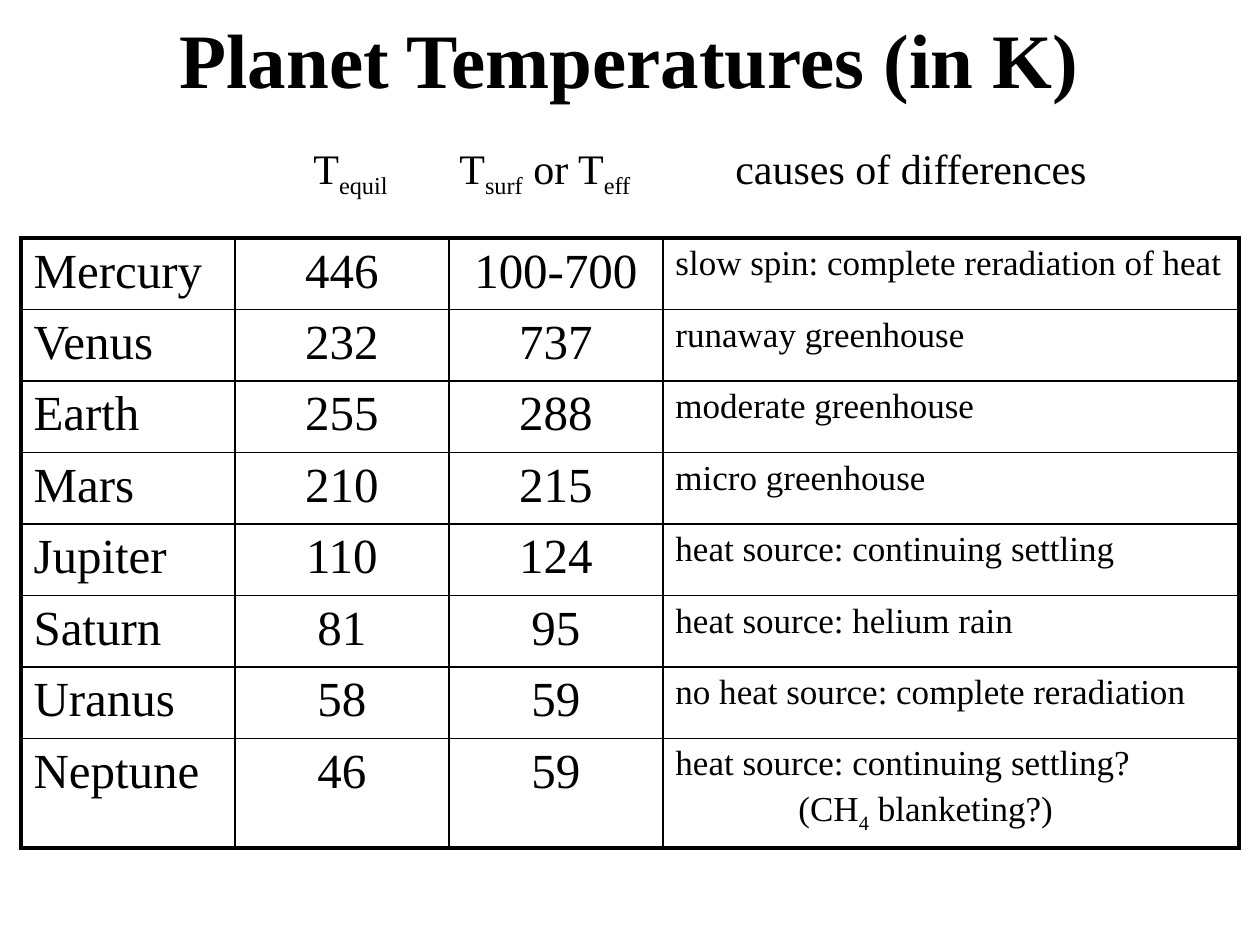
from lxml import etree
from pptx import Presentation
from pptx.dml.color import RGBColor
from pptx.enum.text import MSO_ANCHOR, PP_ALIGN
from pptx.oxml.ns import qn
from pptx.util import Emu, Pt

LEFT, CENTER = PP_ALIGN.LEFT, PP_ALIGN.CENTER
MIDDLE = MSO_ANCHOR.MIDDLE
COLORS = {"ink": "000000"}
FONT = "Times New Roman"
EMU_PER_PX = 914400 / 126

COLUMN_WIDTHS = [214, 214, 214, 576]
LAST_ROW_HEIGHT = 105
THIN, THICK = 1, 2.25
SUBSCRIPT = -25000

# Planet, equilibrium temperature, surface temperature, cause lines
PLANETS = [
    ("Mercury", "446", "100-700", ["slow spin: complete reradiation of heat"]),
    ("Venus", "232", "737", ["runaway greenhouse"]),
    ("Earth", "255", "288", ["moderate greenhouse"]),
    ("Mars", "210", "215", ["micro greenhouse"]),
    ("Jupiter", "110", "124", ["heat source: continuing settling"]),
    ("Saturn", "81", "95", ["heat source: helium rain"]),
    ("Uranus", "58", "59", ["no heat source: complete reradiation"]),
    ("Neptune", "46", "59",
     ["heat source: continuing settling?", "(CH_4_ blanketing?)"]),
]


def px(length):
    return Emu(round(length * EMU_PER_PX))


def write_runs(paragraph, text, size, bold=False):
    """Write text in which every part between underscores is a subscript."""
    for index, part in enumerate(text.split("_")):
        run = paragraph.add_run()
        run.text = part
        for name, value in {"name": FONT, "size": Pt(size), "bold": bold}.items():
            setattr(run.font, name, value)
        run.font.color.rgb = RGBColor.from_string(COLORS["ink"])
        if index % 2:
            run.font._element.set("baseline", str(SUBSCRIPT))


def add_text_box(slide, box):
    frame = slide.shapes.add_textbox(*map(px, box)).text_frame
    frame.word_wrap = True
    return frame


def add_title(slide, box):
    frame = add_text_box(slide, box)
    frame.vertical_anchor = MIDDLE
    paragraph = frame.paragraphs[0]
    paragraph.alignment = CENTER
    write_runs(paragraph, "Planet Temperatures (in K)", 44, bold=True)


def add_column_headings(slide, box):
    paragraph = add_text_box(slide, box).paragraphs[0]
    write_runs(paragraph, "\tT_equil_\tT_surf_ or T_eff_\tcauses of differences", 24)
    # Tab stops place the headings over their columns
    tabs = etree.SubElement(paragraph._p.get_or_add_pPr(), qn("a:tabLst"))
    for position in (62, 208, 484):
        etree.SubElement(tabs, qn("a:tab"), pos=str(px(position)), algn="l")


def set_borders(cell, widths):
    properties = cell._tc.get_or_add_tcPr()
    for index, (side, width) in enumerate(widths.items()):
        line = etree.Element(qn(f"a:ln{side}"), w=str(Pt(width)))
        fill = etree.SubElement(line, qn("a:solidFill"))
        etree.SubElement(fill, qn("a:srgbClr"), val=COLORS["ink"])
        properties.insert(index, line)


def write_cell(cell, lines, size, alignment):
    frame = cell.text_frame
    for index, text in enumerate(lines):
        paragraph = frame.add_paragraph() if index else frame.paragraphs[0]
        paragraph.alignment = alignment
        properties = paragraph._p.get_or_add_pPr()
        if index:
            properties.set("marL", str(px(123)))
            properties.set("indent", "0")
        # Space before is a fifth of a line
        spacing = etree.SubElement(properties, qn("a:spcBef"))
        etree.SubElement(spacing, qn("a:spcPct"), val="20000")
        write_runs(paragraph, text, size)


def add_planet_table(slide, box):
    last_row, last_column = len(PLANETS) - 1, len(COLUMN_WIDTHS) - 1
    table = slide.shapes.add_table(
        len(PLANETS), len(COLUMN_WIDTHS), *map(px, box)).table
    table.first_row = table.horz_banding = False
    for column, width in zip(table.columns, COLUMN_WIDTHS):
        column.width = px(width)

    row_height = (box[3] - LAST_ROW_HEIGHT) / last_row
    for r, (planet, equilibrium, surface, causes) in enumerate(PLANETS):
        table.rows[r].height = px(LAST_ROW_HEIGHT if r == last_row else row_height)
        contents = [([planet], 28, LEFT), ([equilibrium], 28, CENTER),
                    ([surface], 28, CENTER), (causes, 20, LEFT)]
        for c, content in enumerate(contents):
            cell = table.cell(r, c)
            cell.fill.background()
            write_cell(cell, *content)
            # Thick frame outside, thin lines inside
            outer = {"L": c == 0, "R": c == last_column,
                     "T": r == 0, "B": r == last_row}
            set_borders(cell, {side: THICK if is_outer else THIN
                               for side, is_outer in outer.items()})


def main():
    presentation = Presentation()
    presentation.slide_width, presentation.slide_height = px(1260), px(945)
    slide = presentation.slides.add_slide(presentation.slide_layouts[6])
    add_title(slide, (94, 10, 1071, 95))
    add_planet_table(slide, (21, 238, 1218, 604))
    add_column_headings(slide, (239, 136, 905, 63))
    presentation.save("out.pptx")


if __name__ == "__main__":
    main()
